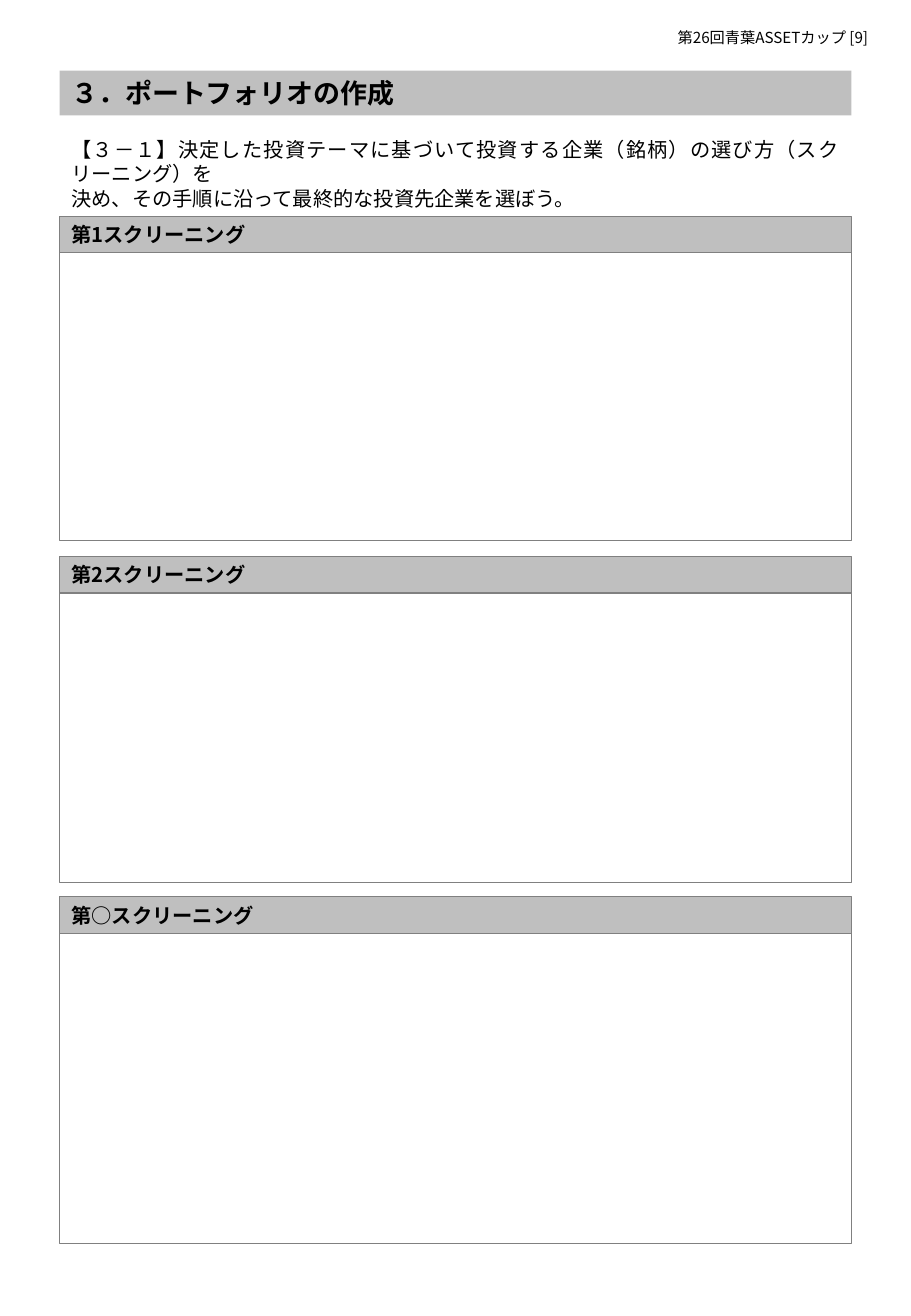
from pptx import Presentation
from pptx.dml.color import RGBColor
from pptx.enum.lang import MSO_LANGUAGE_ID
from pptx.enum.shapes import MSO_SHAPE
from pptx.enum.text import MSO_ANCHOR, PP_ALIGN
from pptx.oxml.ns import qn
from pptx.util import Pt
from lxml import etree

COLORS = {"text": "000000", "band": "BFBFBF", "border": "808080"}
FONT = "Noto Sans CJK JP"
LEFT, WIDTH = 35.3, 469.4

prs = Presentation()
prs.slide_width, prs.slide_height = Pt(540), Pt(779.8)
slide = prs.slides.add_slide(prs.slide_layouts[6])


def write(box, lines, size, bold=False, align=PP_ALIGN.LEFT, anchor=MSO_ANCHOR.TOP):
    frame = box.text_frame
    frame.word_wrap = True
    frame.vertical_anchor = anchor
    frame.text = "\n".join(lines)
    font_format = {"name": FONT, "size": Pt(size), "bold": bold,
                   "language_id": MSO_LANGUAGE_ID.JAPANESE}
    for paragraph in frame.paragraphs:
        paragraph.alignment = align
        for run in paragraph.runs:
            for key, value in font_format.items():
                setattr(run.font, key, value)
            run.font.color.rgb = RGBColor.from_string(COLORS["text"])
            # East Asian typeface
            east_asian = etree.SubElement(run.font._element, qn("a:ea"))
            east_asian.set("typeface", FONT)


def add_panel(top, height, fill=None, line_width=None):
    panel = slide.shapes.add_shape(
        MSO_SHAPE.RECTANGLE, Pt(LEFT), Pt(top), Pt(WIDTH), Pt(height))
    panel.shadow.inherit = False
    if fill:
        panel.fill.solid()
        panel.fill.fore_color.rgb = RGBColor.from_string(COLORS[fill])
    else:
        panel.fill.background()
    if line_width:
        panel.line.color.rgb = RGBColor.from_string(COLORS["border"])
        panel.line.width = Pt(line_width)
    else:
        panel.line.fill.background()
    return panel


# Page header
page_header = slide.shapes.add_textbox(Pt(394.6), Pt(13), Pt(145.4), Pt(18))
write(page_header, ["第26回青葉ASSETカップ [9]"], 9)

# Chapter title and task
chapter = add_panel(41.8, 26.6, "band")
write(chapter, ["３．ポートフォリオの作成"], 16, bold=True)

task = slide.shapes.add_textbox(Pt(LEFT), Pt(77.8), Pt(WIDTH), Pt(36))
write(task, [
    "【３－１】決定した投資テーマに基づいて投資する企業（銘柄）の選び方（スクリーニング）を",
    "決め、その手順に沿って最終的な投資先企業を選ぼう。",
], 12, align=PP_ALIGN.JUSTIFY)

# Screening steps: heading band above an empty answer area
FIRST_TOP, STEP_PITCH, HEADING_HEIGHT = 128.2, 201.6, 21.6
steps = [("1", 170.6), ("2", 171.4), ("○", 183.6)]
for index, (number, answer_height) in enumerate(steps):
    top = FIRST_TOP + index * STEP_PITCH
    heading = add_panel(top, HEADING_HEIGHT, "band", 0.75)
    write(heading, [f"第{number}スクリーニング"], 12, bold=True, anchor=MSO_ANCHOR.MIDDLE)
    add_panel(top + HEADING_HEIGHT, answer_height, line_width=0.5)

prs.save("out.pptx")
